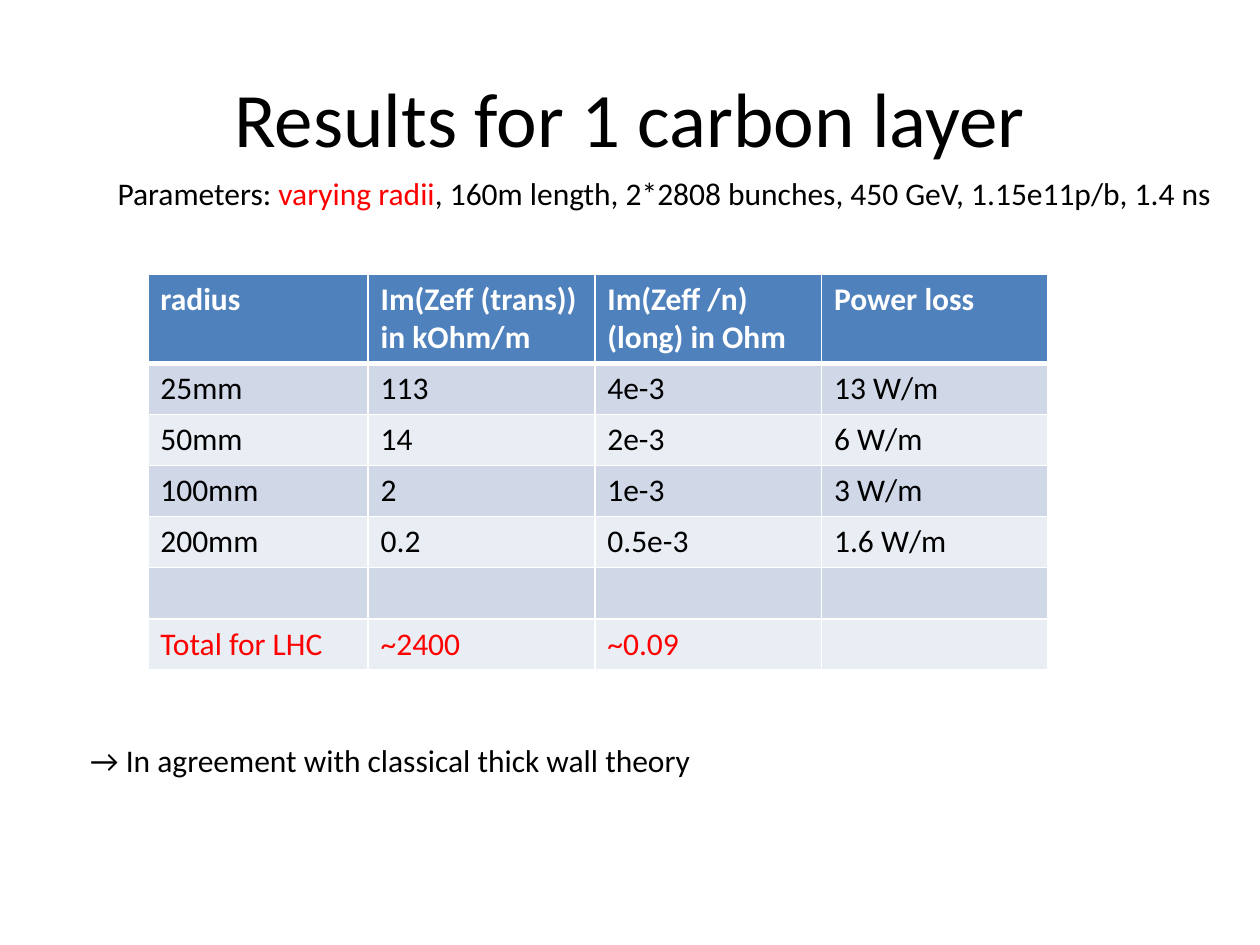
from pptx import Presentation
from pptx.dml.color import RGBColor
from pptx.enum.text import MSO_ANCHOR, MSO_AUTO_SIZE, PP_ALIGN
from pptx.oxml import parse_xml
from pptx.oxml.ns import nsdecls
from pptx.util import Cm, Pt

FONT = "Calibri"
COLORS = {
    "text": "000000",
    "accent": "FF0000",
    "header": "4F81BD",
    "band_dark": "D0D8E8",
    "band_light": "E9EDF4",
    "white": "FFFFFF",
}

ROWS = [
    ["radius", "Im(Zeff (trans))\vin kOhm/m", "Im(Zeff /n) (long) in Ohm", "Power loss"],
    ["25mm", "113", "4e-3", "13 W/m"],
    ["50mm", "14", "2e-3", "6 W/m"],
    ["100mm", "2", "1e-3", "3 W/m"],
    ["200mm", "0.2", "0.5e-3", "1.6 W/m"],
    ["", "", "", ""],
    ["Total for LHC", "~2400", "~0.09", ""],
]
COLUMN_WIDTHS = [4.44, 4.57, 4.57, 4.57]
HEADER_HEIGHT, ROW_HEIGHT = 1.75, 1.03


def rgb(name):
    return RGBColor.from_string(COLORS[name])


def style_font(font, size, color="text", bold=False):
    font.name = FONT
    font.size = Pt(size)
    font.bold = bold
    font.color.rgb = rgb(color)


def add_text(page, left, top, width, height, spans, size=18):
    """Add a text box whose spans are (text, color) pairs."""
    box = page.shapes.add_textbox(Cm(left), Cm(top), Cm(width), Cm(height))
    frame = box.text_frame
    frame.word_wrap = False
    frame.auto_size = MSO_AUTO_SIZE.SHAPE_TO_FIT_TEXT
    para = frame.paragraphs[0]
    style_font(para.font, size)
    for text, color in spans:
        span = para.add_run()
        span.text = text
        if color != "text":
            span.font.color.rgb = rgb(color)
    return box


def add_title(page, text):
    box = add_text(page, 1.27, 0.76, 22.86, 3.18, [(text, "text")], size=44)
    frame = box.text_frame
    frame.word_wrap = True
    frame.auto_size = MSO_AUTO_SIZE.NONE
    frame.vertical_anchor = MSO_ANCHOR.MIDDLE
    frame.paragraphs[0].alignment = PP_ALIGN.CENTER


def set_borders(cell, widths):
    """Draw white borders; the fill must come after them in the cell XML."""
    properties = cell._tc.get_or_add_tcPr()
    for index, (side, width) in enumerate(widths.items()):
        properties.insert(index, parse_xml(
            f'<a:{side} {nsdecls("a")} w="{Pt(width)}"><a:solidFill>'
            f'<a:srgbClr val="{COLORS["white"]}"/></a:solidFill></a:{side}>'))


def row_style(row):
    """Return fill and text colours of a table row."""
    if row == 0:
        return "header", "white"
    fill = "band_dark" if row % 2 else "band_light"
    return fill, "accent" if row == len(ROWS) - 1 else "text"


def add_results_table(page, left, top):
    heights = [HEADER_HEIGHT] + [ROW_HEIGHT] * (len(ROWS) - 1)
    table = page.shapes.add_table(
        len(ROWS), len(COLUMN_WIDTHS), Cm(left), Cm(top),
        Cm(sum(COLUMN_WIDTHS)), Cm(sum(heights))).table
    for column, width in zip(table.columns, COLUMN_WIDTHS):
        column.width = Cm(width)
    for row, (texts, height) in enumerate(zip(ROWS, heights)):
        table.rows[row].height = Cm(height)
        fill, color = row_style(row)
        for column, text in enumerate(texts):
            cell = table.cell(row, column)
            cell.text = text
            style_font(cell.text_frame.paragraphs[0].font, 18, color, bold=row == 0)
            cell.fill.solid()
            cell.fill.fore_color.rgb = rgb(fill)
            # A thicker rule separates the header from the body
            set_borders(cell, {"lnL": 1, "lnR": 1,
                               "lnT": 3 if row == 1 else 1,
                               "lnB": 3 if row == 0 else 1})


def main():
    deck = Presentation()
    deck.slide_width, deck.slide_height = Cm(25.4), Cm(19.05)
    page = deck.slides.add_slide(deck.slide_layouts[6])

    # Heading and results
    add_title(page, "Results for 1 carbon layer")
    add_results_table(page, 2.98, 5.52)

    # Parameters below the title
    add_text(page, 2.12, 3.39, 22.84, 1.03, [
        ("Parameters: ", "text"),
        ("varying radii", "accent"),
        (", 160m length, 2*2808 bunches, 450 GeV, 1.15e11p/b, 1.4 ns", "text"),
    ])

    # Conclusion
    add_text(page, 1.57, 14.82, 12.81, 1.03,
             [("→ In agreement with classical thick wall theory", "text")])

    deck.save("out.pptx")


if __name__ == "__main__":
    main()
